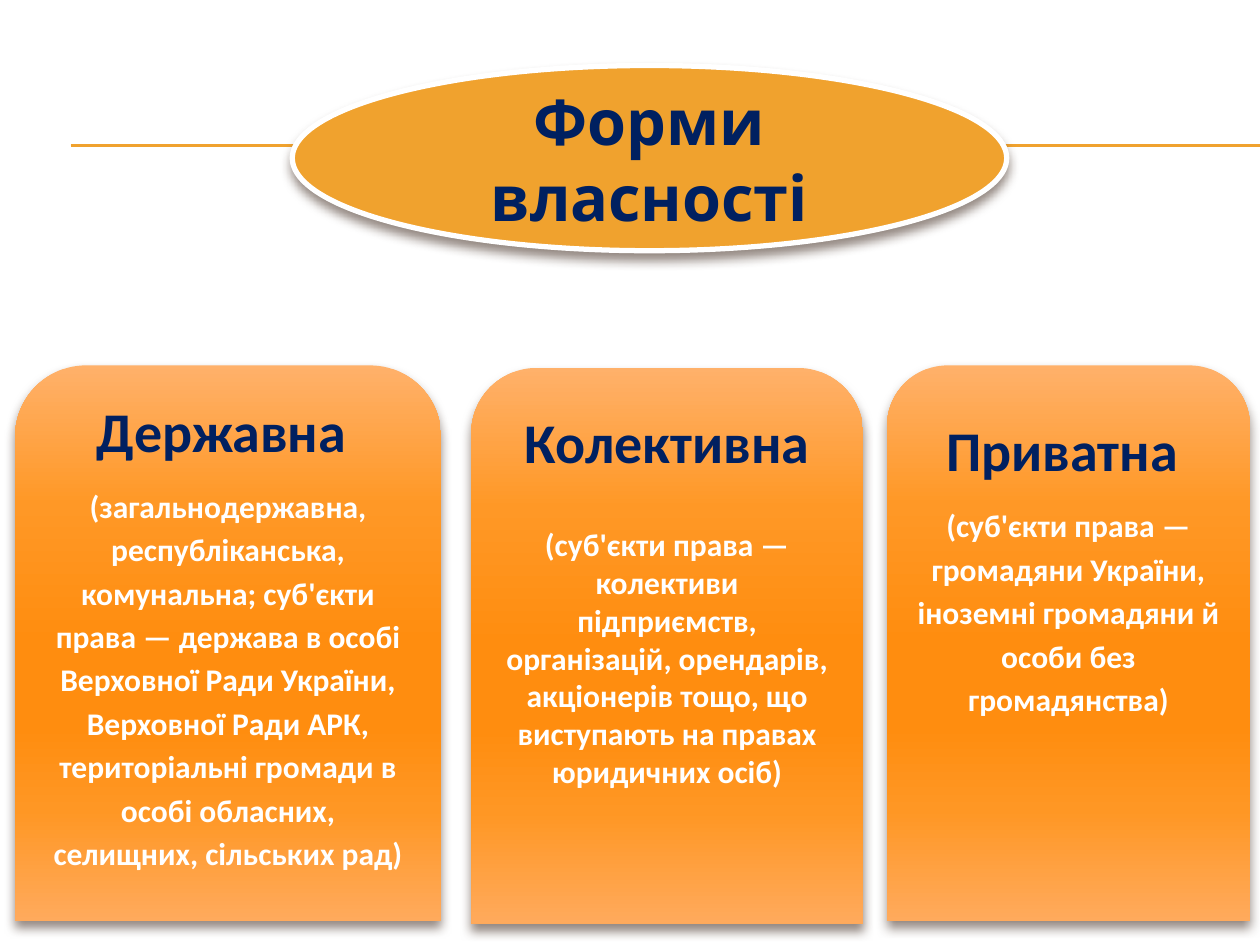
from dataclasses import dataclass

from lxml import etree
from pptx import Presentation
from pptx.dml.color import RGBColor
from pptx.enum.shapes import MSO_CONNECTOR, MSO_SHAPE
from pptx.enum.text import MSO_ANCHOR, PP_ALIGN
from pptx.oxml.ns import qn
from pptx.util import Inches, Pt

STRAIGHT = MSO_CONNECTOR.STRAIGHT
ELLIPSE = MSO_SHAPE.OVAL
ROUND_TOP = MSO_SHAPE.ROUND_2_SAME_RECTANGLE
TOP, MIDDLE = MSO_ANCHOR.TOP, MSO_ANCHOR.MIDDLE
CENTER = PP_ALIGN.CENTER
GOLD, NAVY, WHITE, BROWN = "F0A22E", "002060", "FFFFFF", "4E3B30"
ORANGE_STOPS = ((0, "FFB16A"), (25, "FF9826"), (50, "FF8D0F"),
                (65, "FF8D0F"), (80, "FF9724"), (100, "FFAA5C"))
CARD_HEIGHT = 4.41


@dataclass(frozen=True)
class Card:
    """One form of ownership: its place, wording and text spacing."""
    left: float
    top: float
    width: float
    heading: str
    body: str
    inset: float
    line_spacing: float
    gap: float


CARDS = (
    Card(0.12, 2.9, 3.38, "Державна ",
         "(загальнодержавна, республіканська, комунальна; суб'єкти права — "
         "держава в особі Верховної Ради України, Верховної Ради АРК, "
         "територіальні громади в особі обласних, селищних, сільських рад)",
         0, 1.15, 10),
    Card(3.74, 2.92, 3.11, "Колективна",
         "(суб'єкти права — колективи підприємств, організацій, орендарів, "
         "акціонерів тощо, що виступають на правах юридичних осіб)",
         0.16, 1.0, 29),
    Card(7.04, 2.9, 2.88, "Приватна ",
         "(суб'єкти права — громадяни України, іноземні громадяни й особи "
         "без громадянства)",
         0.18, 1.15, 10),
)


def color(value: str) -> RGBColor:
    """Turn a hex string into a colour."""
    return RGBColor.from_string(value)


def set_values(target, values: dict) -> None:
    """Set each named attribute of the target."""
    for name, value in values.items():
        setattr(target, name, value)


def add_color(parent, value: str):
    """Add a colour element to an XML parent."""
    return etree.SubElement(parent, qn("a:srgbClr"), val=value)


def add_shadow(shape) -> None:
    """Give the shape a soft brown shadow below it."""
    shape.shadow.inherit = False
    effects = shape._element.spPr.find(qn("a:effectLst"))
    shadow = etree.SubElement(
        effects, qn("a:outerShdw"), blurRad=str(Pt(6)), dist=str(Pt(4)),
        dir="5400000", rotWithShape="0")
    etree.SubElement(add_color(shadow, BROWN), qn("a:alpha"), val="60000")


def fill_gradient(shape) -> None:
    """Fill the shape with the vertical orange gradient."""
    gradient = etree.Element(qn("a:gradFill"), rotWithShape="1")
    stops = etree.SubElement(gradient, qn("a:gsLst"))
    for position, value in ORANGE_STOPS:
        stop = etree.SubElement(stops, qn("a:gs"), pos=str(position * 1000))
        add_color(stop, value)
    etree.SubElement(gradient, qn("a:lin"), ang="5400000", scaled="0")
    shape._element.spPr.find(qn("a:prstGeom")).addnext(gradient)


def write(para, text: str, font: str, size: int, ink: str,
          layout: dict) -> None:
    """Write one centred bold paragraph."""
    set_values(para, {"alignment": CENTER, **layout})
    span = para.add_run()
    span.text = text
    set_values(span.font, {"name": font, "size": Pt(size), "bold": True})
    span.font.color.rgb = color(ink)


def draw_rule(page, top: float) -> None:
    """Draw a thin gold line to the right edge of the page."""
    rule = page.shapes.add_connector(
        STRAIGHT, Inches(0.56), Inches(top), Inches(10), Inches(top))
    rule.line.color.rgb = color(GOLD)
    rule.line.width = Pt(0.75)
    etree.SubElement(rule._element.spPr, qn("a:effectLst"))


def draw_title(page) -> None:
    """Draw the title ellipse."""
    oval = page.shapes.add_shape(
        ELLIPSE, Inches(2.32), Inches(0.52), Inches(5.67), Inches(1.47))
    oval.fill.solid()
    oval.fill.fore_color.rgb = color(GOLD)
    oval.line.color.rgb = color(WHITE)
    oval.line.width = Pt(3)
    add_shadow(oval)
    box = oval.text_frame
    set_values(box, {"word_wrap": True, "vertical_anchor": MIDDLE})
    write(box.paragraphs[0], "Форми власності", "Cabin", 36, NAVY, {})


def draw_card(page, card: Card) -> None:
    """Draw one card with its heading and explanation."""
    shape = page.shapes.add_shape(
        ROUND_TOP, Inches(card.left), Inches(card.top),
        Inches(card.width), Inches(CARD_HEIGHT))
    fill_gradient(shape)
    shape.line.fill.background()
    add_shadow(shape)
    box = shape.text_frame
    set_values(box, {"word_wrap": True, "vertical_anchor": TOP,
                     "margin_top": Inches(card.inset)})
    layout = {"line_spacing": card.line_spacing, "space_after": Pt(card.gap)}
    write(box.paragraphs[0], card.heading, "Calibri", 32, NAVY, layout)
    write(box.add_paragraph(), card.body, "Calibri", 18, WHITE, layout)


def main() -> None:
    """Build the slide and save it."""
    deck = Presentation()
    set_values(deck, {"slide_width": Inches(10), "slide_height": Inches(7.5)})
    page = deck.slides.add_slide(deck.slide_layouts[6])
    for top in (1.15, 1.16):
        draw_rule(page, top)
    draw_title(page)
    for card in CARDS:
        draw_card(page, card)
    deck.save("out.pptx")


if __name__ == "__main__":
    main()
